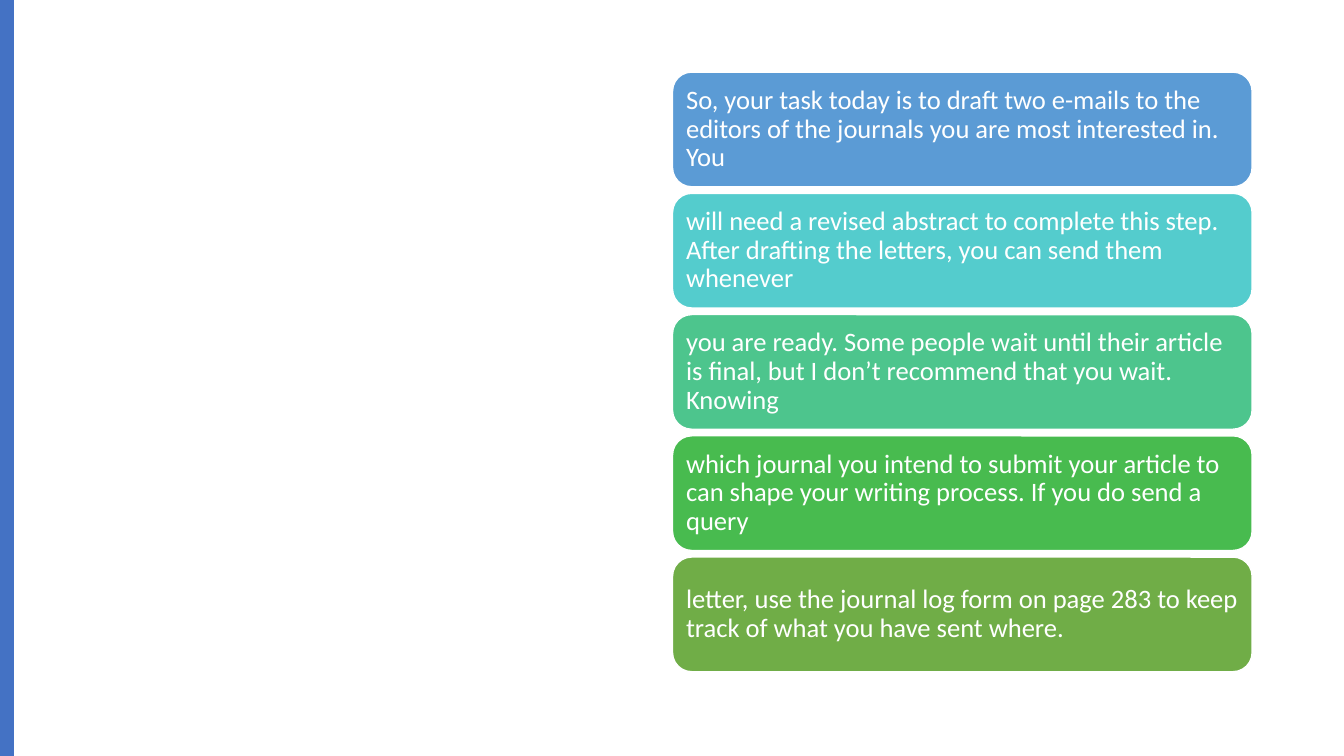
import pptx
import pptx.dml.color
import pptx.enum.shapes
import pptx.enum.text
import pptx.util

Pt = pptx.util.Pt
RGBColor = pptx.dml.color.RGBColor
MSO_SHAPE = pptx.enum.shapes.MSO_SHAPE

WHITE = RGBColor(0xFF, 0xFF, 0xFF)
ACCENT = RGBColor(0x44, 0x72, 0xC4)
BLUE = RGBColor(0x5B, 0x9B, 0xD5)
TURQUOISE = RGBColor(0x54, 0xCC, 0xCD)
SEA_GREEN = RGBColor(0x4D, 0xC5, 0x8D)
GREEN = RGBColor(0x48, 0xBB, 0x4F)
OLIVE = RGBColor(0x70, 0xAD, 0x47)

CARD_LEFT, CARD_TOP = 480.4, 51.5
CARD_WIDTH, CARD_HEIGHT = 414, 81.9
CARD_PITCH = 86.6

CARDS = [
    (BLUE, "So, your task today is to draft two e-mails to the editors "
           "of the journals you are most interested in. You"),
    (TURQUOISE, "will need a revised abstract to complete this step. "
                "After drafting the letters, you can send them whenever"),
    (SEA_GREEN, "you are ready. Some people wait until their article is "
                "final, but I don’t recommend that you wait. Knowing"),
    (GREEN, "which journal you intend to submit your article to can "
            "shape your writing process. If you do send a query"),
    (OLIVE, "letter, use the journal log form on page 283 to keep track "
            "of what you have sent where."),
]


def add_box(s, kind, left, top, width, height, fill, line=None):
    sp = s.shapes.add_shape(kind, Pt(left), Pt(top), Pt(width), Pt(height))
    sp.shadow.inherit = False
    sp.fill.solid()
    sp.fill.fore_color.rgb = fill
    if line is None:
        sp.line.fill.background()
    else:
        sp.line.color.rgb = line
        sp.line.width = Pt(1)
    return sp


def write_text(sp, text, *, size=19, font="Calibri", color=WHITE,
               line_spacing=0.9, inset=5.7):
    tf = sp.text_frame
    tf.word_wrap = True
    tf.vertical_anchor = pptx.enum.text.MSO_ANCHOR.MIDDLE
    tf.margin_left = tf.margin_right = Pt(inset)
    tf.margin_top = tf.margin_bottom = Pt(inset)
    p = tf.paragraphs[0]
    p.alignment = pptx.enum.text.PP_ALIGN.LEFT
    p.line_spacing = line_spacing
    r = p.add_run()
    r.text = text
    r.font.size = Pt(size)
    r.font.name = font
    r.font.color.rgb = color


def add_card(s, top, fill, text):
    sp = add_box(s, MSO_SHAPE.ROUNDED_RECTANGLE, CARD_LEFT, top,
                 CARD_WIDTH, CARD_HEIGHT, fill, line=WHITE)
    write_text(sp, text)


def main():
    prs = pptx.Presentation()
    prs.slide_width, prs.slide_height = Pt(960), Pt(540)
    s = prs.slides.add_slide(prs.slide_layouts[6])
    add_box(s, MSO_SHAPE.RECTANGLE, 0, 0, 10, 540, ACCENT)
    for i, (fill, text) in enumerate(CARDS):
        add_card(s, CARD_TOP + i * CARD_PITCH, fill, text)
    prs.save("out.pptx")


if __name__ == "__main__":
    main()
